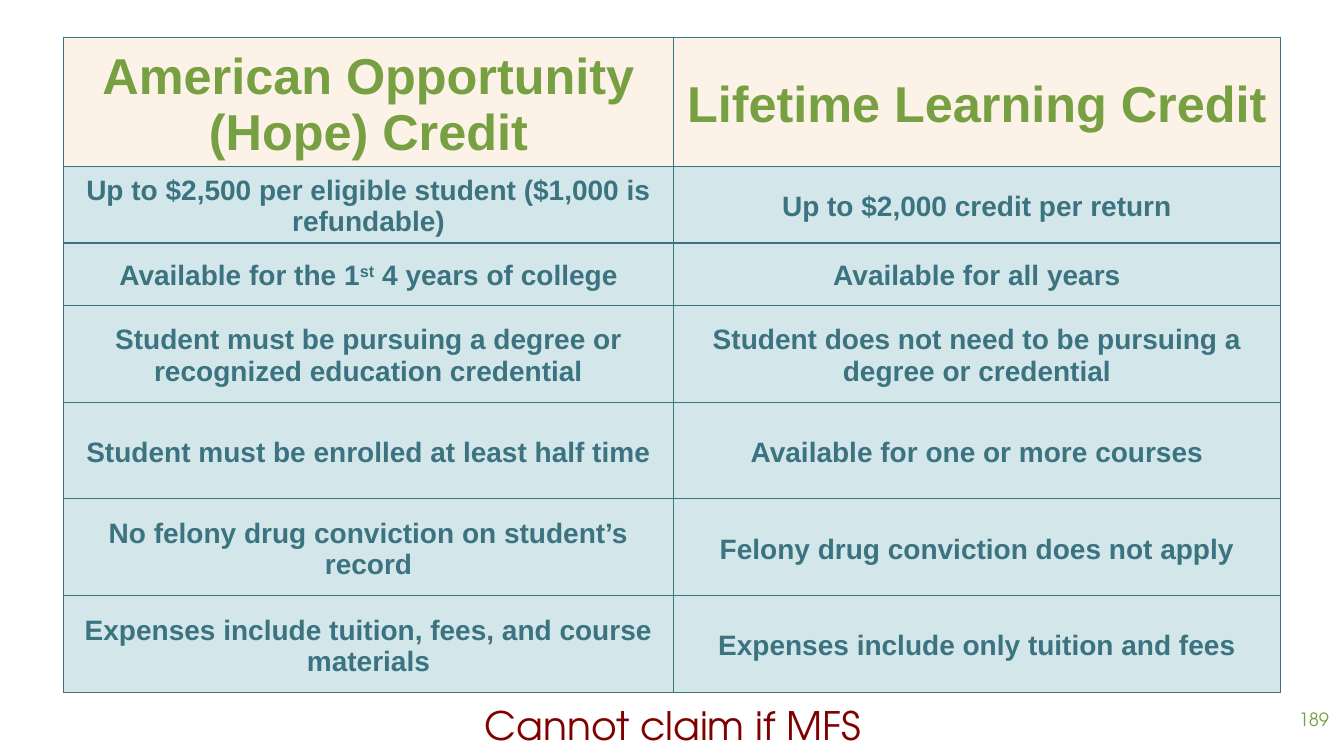
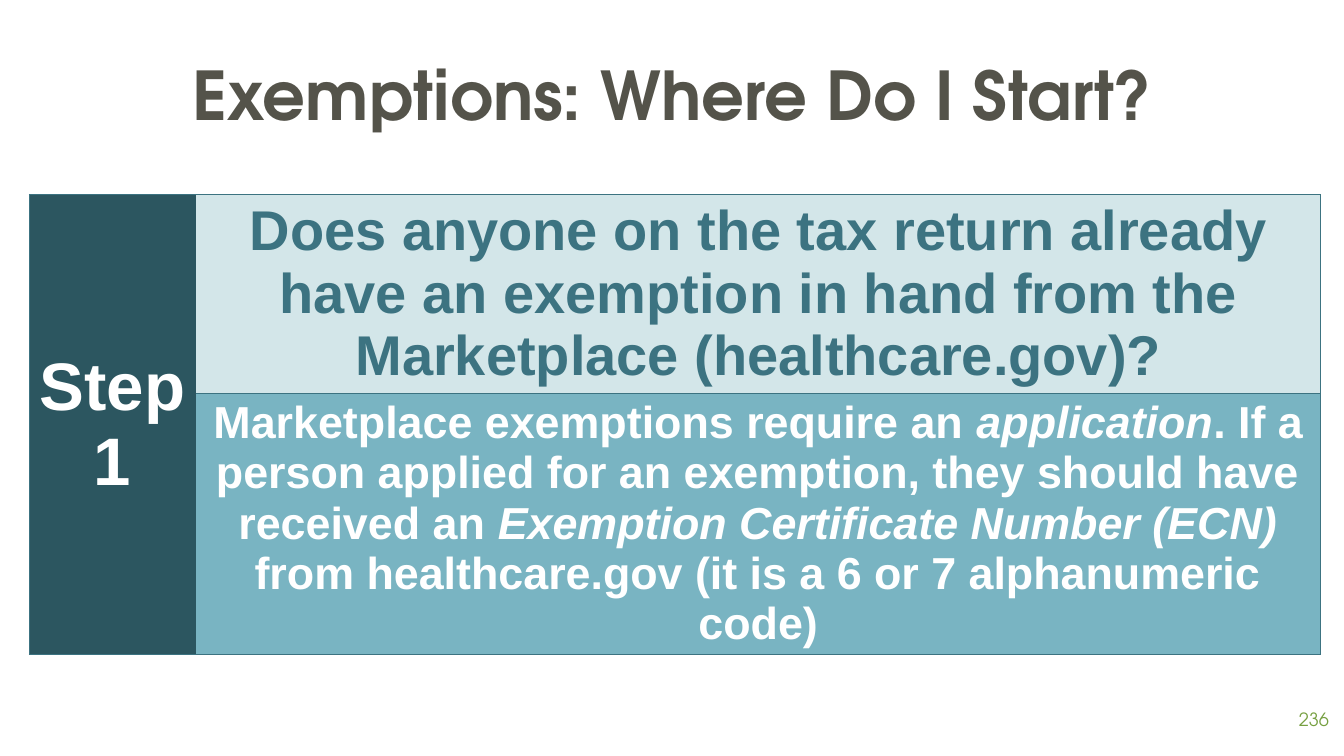
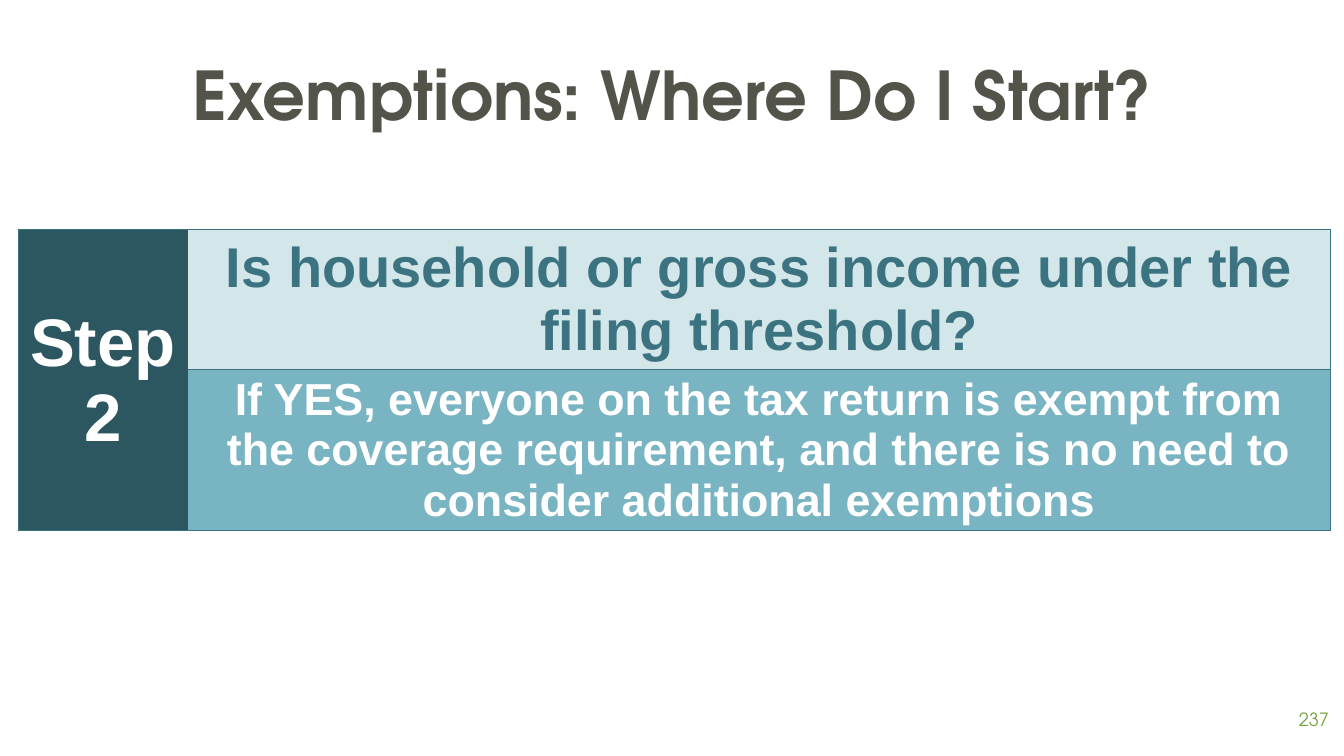
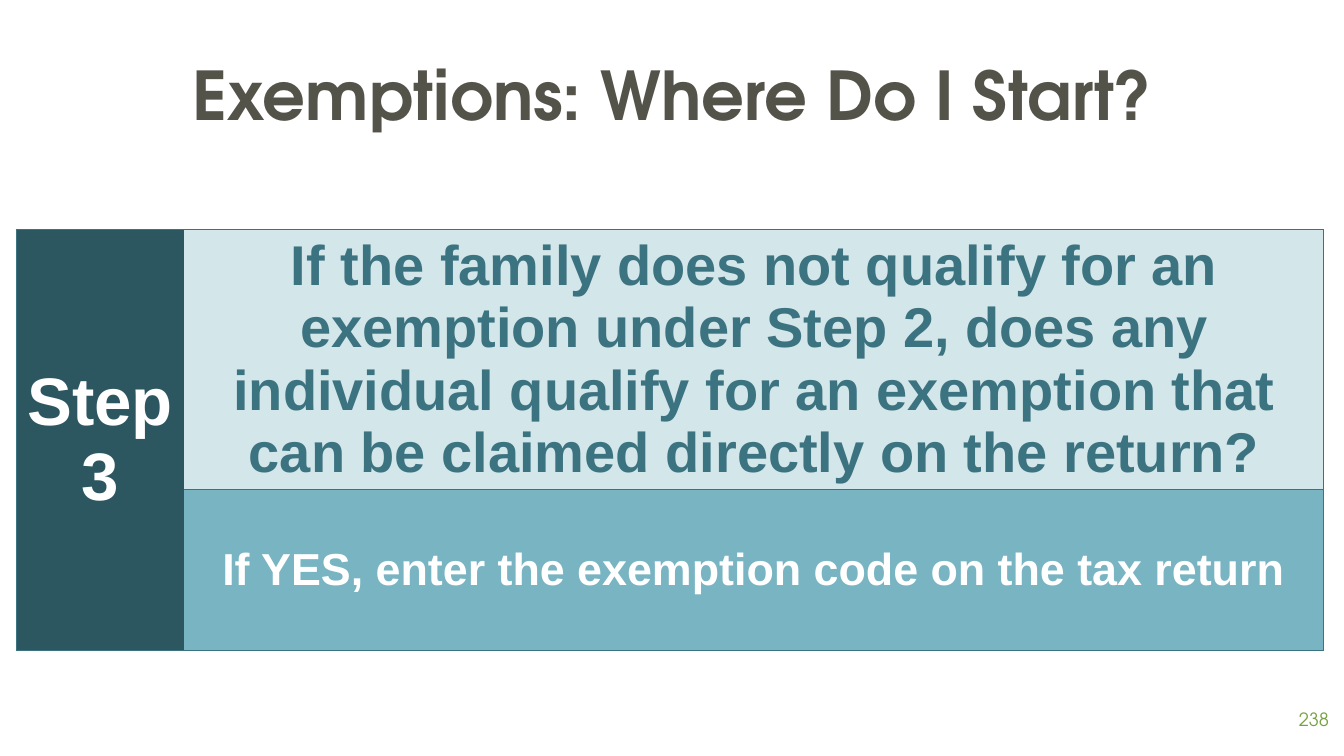
from lxml import etree
from pptx import Presentation
from pptx.dml.color import RGBColor
from pptx.enum.text import MSO_ANCHOR, PP_ALIGN
from pptx.oxml.ns import qn
from pptx.util import Inches, Pt

CENTER, RIGHT = PP_ALIGN.CENTER, PP_ALIGN.RIGHT
MIDDLE, TOP = MSO_ANCHOR.MIDDLE, MSO_ANCHOR.TOP
HEAD, BODY = "TeX Gyre Adventor", "Arial"
TEAL, DEEP, MID, PALE = "3C7381", "2C5660", "79B4C2", "D3E6E9"
GREEN, CREAM, GRAY, RED, WHITE = "77A042", "FCF2E7", "54534A", "800000", "FFFFFF"


def write(frame, text, size, hue, face=HEAD, bold=False, align=CENTER):
    parts = [(text, "")] if isinstance(text, str) else text
    para = frame.paragraphs[0]
    para.alignment = align
    for words, mark in parts:
        run = para.add_run()
        run.text = words
        font = run.font
        font.name, font.size, font.bold = face, Pt(size), bold
        font.italic = mark == "italic"
        font.color.rgb = RGBColor.from_string(hue)
        if mark == "super":
            run._r.get_or_add_rPr().set("baseline", "30000")


def dress(cell, text, size, hue, fill, edges="LRTB", width=0.75, top=0.05):
    write(cell.text_frame, text, size, hue, BODY, True)
    cell.vertical_anchor = MIDDLE
    cell.margin_top = Inches(top)
    props = cell._tc.get_or_add_tcPr()
    for side in "LRTB":
        line = etree.SubElement(props, qn(f"a:ln{side}"), w=str(Pt(width)))
        if side in edges:
            solid = etree.SubElement(line, qn("a:solidFill"))
            etree.SubElement(solid, qn("a:srgbClr"), val=TEAL)
        else:
            etree.SubElement(line, qn("a:noFill"))
    cell.fill.solid()
    cell.fill.fore_color.rgb = RGBColor.from_string(fill)


deck = Presentation()
deck.slide_width, deck.slide_height = Inches(13.33), Inches(7.5)

credits = [
    ("American Opportunity (Hope) Credit", "Lifetime Learning Credit"),
    ("Up to $2,500 per eligible student ($1,000 is refundable)",
     "Up to $2,000 credit per return"),
    ([("Available for the 1", ""), ("st", "super"), (" 4 years of college", "")],
     "Available for all years"),
    ("Student must be pursuing a degree or recognized education credential",
     "Student does not need to be pursuing a degree or credential"),
    ("Student must be enrolled at least half time",
     "Available for one or more courses"),
    ("No felony drug conviction on student’s record",
     "Felony drug conviction does not apply"),
    ("Expenses include tuition, fees, and course materials",
     "Expenses include only tuition and fees"),
]
slide = deck.slides.add_slide(deck.slide_layouts[6])
tall = [1.28, 0.76, 0.62] + [0.96] * 4
table = slide.shapes.add_table(
    len(credits), 2, Inches(0.63), Inches(0.37), Inches(12.07), Inches(sum(tall))).table
for col, wide in zip(table.columns, (6.05, 6.02)):
    col.width = Inches(wide)
for r, pair in enumerate(credits):
    table.rows[r].height = Inches(tall[r])
    look = (20, TEAL, PALE) if r else (36, GREEN, CREAM)
    for c, text in enumerate(pair):
        dress(table.cell(r, c), text, *look, width=1, top=0.09 if r else 0.11)

note = slide.shapes.add_textbox(Inches(0.66), Inches(6.91), Inches(12.03), Inches(0.57))
note.text_frame.word_wrap = True
write(note.text_frame, "Cannot claim if MFS", 28, RED)

steps = [
    (0.29, 1.93, (1.65, 11.16), (1.97, 2.59), TOP,
     "Does anyone on the tax return already have an exemption in hand from the "
     "Marketplace (healthcare.gov)?",
     [("Marketplace exemptions require an ", ""), ("application", "italic"),
      (". If a person applied for an exemption, they should have received an ", ""),
      ("Exemption Certificate Number (ECN) ", "italic"),
      ("from healthcare.gov (it is a 6 or 7 alphanumeric code)", "")]),
    (0.18, 2.28, (1.68, 11.34), (1.39, 1.59), TOP,
     "Is household or gross income under the filing threshold?",
     "If YES, everyone on the tax return is exempt from the coverage requirement, "
     "and there is no need to consider additional exemptions"),
    (0.16, 2.28, (1.67, 11.3), (2.58, 1.59), MIDDLE,
     "If the family does not qualify for an exemption under Step 2, does any "
     "individual qualify for an exemption that can be claimed directly on the return?",
     "If YES, enter the exemption code on the tax return"),
]
for n, (left, top, wides, talls, anchor, ask, answer) in enumerate(steps, 1):
    slide = deck.slides.add_slide(deck.slide_layouts[5])
    title = slide.shapes.title
    title.left, title.top = Inches(0.67), Inches(0.3)
    title.width, title.height = Inches(12), Inches(1.25)
    title.text_frame.vertical_anchor = MIDDLE
    write(title.text_frame, "Exemptions: Where Do I Start?", 48, GRAY, bold=True)

    table = slide.shapes.add_table(
        2, 2, Inches(left), Inches(top), Inches(sum(wides)), Inches(sum(talls))).table
    for col, wide in zip(table.columns, wides):
        col.width = Inches(wide)
    for row, high in zip(table.rows, talls):
        row.height = Inches(high)
    table.cell(0, 0).merge(table.cell(1, 0))
    dress(table.cell(0, 0), f"Step {n}", 48, WHITE, DEEP, "LTB")
    dress(table.cell(0, 1), ask, 40, TEAL, PALE, "RTB")
    dress(table.cell(1, 1), answer, 32, WHITE, MID, "RTB")
    table.cell(1, 1).vertical_anchor = anchor

for slide, page in zip(deck.slides, (189, 236, 237, 238)):
    foot = slide.shapes.add_textbox(Inches(12.48), Inches(6.93), Inches(0.8), Inches(0.57))
    frame = foot.text_frame
    frame.word_wrap = True
    frame.margin_top = frame.margin_bottom = Inches(0.1)
    write(frame, str(page), 13, GREEN, align=RIGHT)

deck.save("out.pptx")
